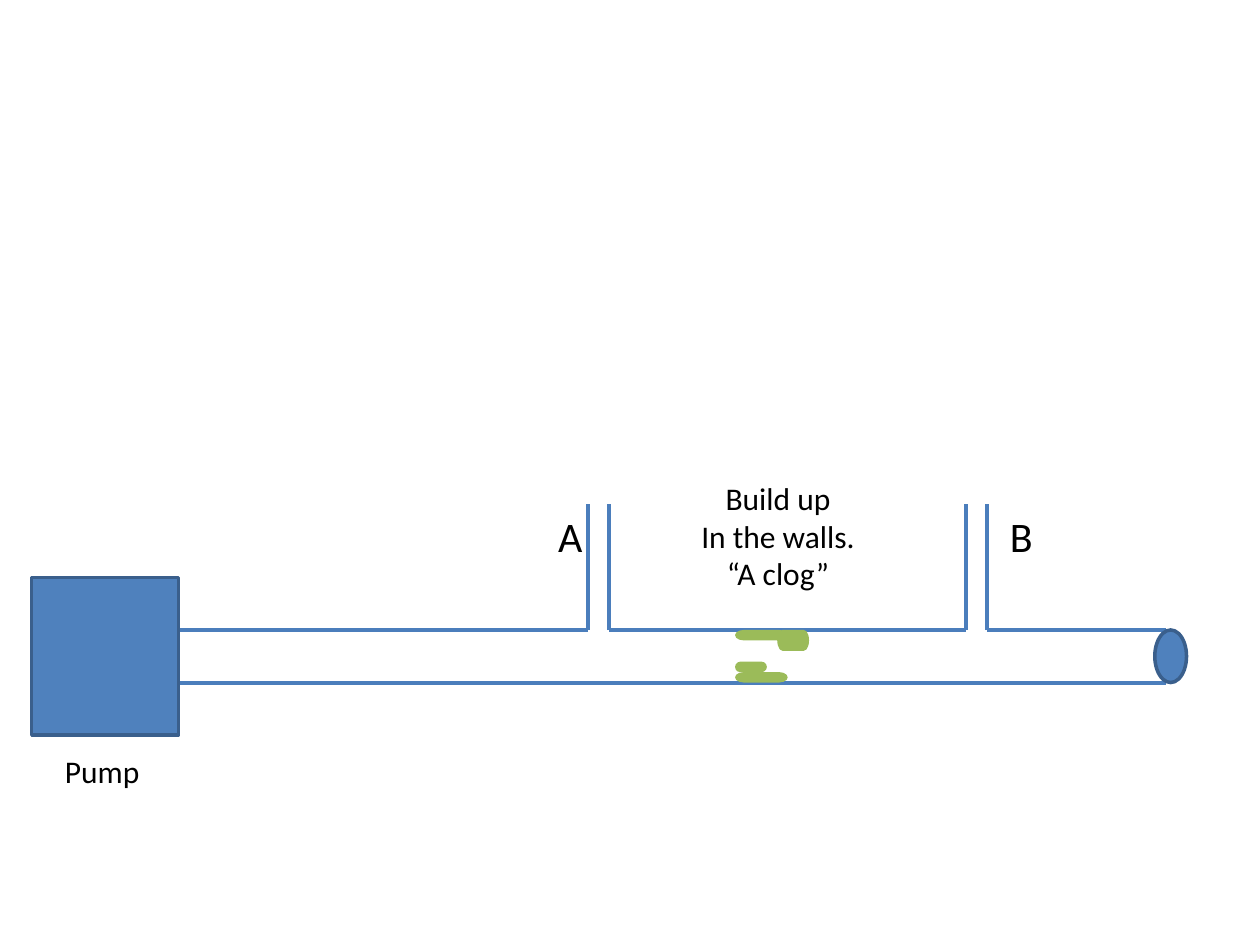
from dataclasses import dataclass

from lxml import etree
from pptx import Presentation
from pptx.dml.color import RGBColor
from pptx.enum.shapes import MSO_CONNECTOR, MSO_SHAPE
from pptx.enum.text import MSO_AUTO_SIZE, PP_ALIGN
from pptx.oxml.ns import qn
from pptx.util import Cm, Pt

STRAIGHT = MSO_CONNECTOR.STRAIGHT
RECTANGLE = MSO_SHAPE.RECTANGLE
OVAL = MSO_SHAPE.OVAL
TERMINATOR = MSO_SHAPE.FLOWCHART_TERMINATOR
LEFT, CENTER = PP_ALIGN.LEFT, PP_ALIGN.CENTER
FIT_SHAPE = MSO_AUTO_SIZE.SHAPE_TO_FIT_TEXT
BLANK_LAYOUT = 6


@dataclass(frozen=True)
class Theme:
    font: str = "Calibri"
    ink: RGBColor = RGBColor.from_string("000000")
    wall: RGBColor = RGBColor.from_string("4B7EBC")
    body: RGBColor = RGBColor.from_string("4F81BD")
    edge: RGBColor = RGBColor.from_string("3A5F8C")
    clog: RGBColor = RGBColor.from_string("9BBB59")
    note_size: Pt = Pt(18)
    letter_size: Pt = Pt(24)
    wall_width: Pt = Pt(2.25)
    edge_width: Pt = Pt(2)


THEME = Theme()

# Pipe geometry in centimetres
PIPE_TOP, PIPE_BOTTOM = 12.7, 13.76
PIPE_START, PIPE_END = 3.6, 23.5
RISER_TOP = 10.16
RISER_A = (11.85, 12.28)
RISER_B = (19.47, 19.9)
CLOG_LEFT, CLOG_LAYER = 14.82, 0.21


def add_wall(slide, x1, y1, x2, y2):
    wall = slide.shapes.add_connector(STRAIGHT, Cm(x1), Cm(y1), Cm(x2), Cm(y2))
    wall.line.color.rgb = THEME.wall
    wall.line.width = THEME.wall_width
    etree.SubElement(wall._element.spPr, qn("a:effectLst"))


def add_solid(slide, kind, left, top, width, height, fill, edge=None):
    solid = slide.shapes.add_shape(kind, Cm(left), Cm(top), Cm(width), Cm(height))
    solid.shadow.inherit = False
    solid.fill.solid()
    solid.fill.fore_color.rgb = fill
    if edge is None:
        solid.line.fill.background()
    else:
        solid.line.color.rgb = edge
        solid.line.width = THEME.edge_width


def add_label(slide, text, left, top, width, height, size, align=LEFT):
    label = slide.shapes.add_textbox(Cm(left), Cm(top), Cm(width), Cm(height))
    frame = label.text_frame
    frame.word_wrap = False
    frame.auto_size = FIT_SHAPE
    frame.text = text
    for paragraph in frame.paragraphs:
        paragraph.alignment = align
        for run in paragraph.runs:
            run.font.name = THEME.font
            run.font.size = size
            run.font.color.rgb = THEME.ink


def add_pipe(slide):
    """Draw the pipe walls, open at the top under each riser."""
    add_wall(slide, PIPE_START, PIPE_BOTTOM, PIPE_END, PIPE_BOTTOM)
    top_stops = (PIPE_START, *RISER_A, *RISER_B, PIPE_END)
    for start, end in zip(top_stops[::2], top_stops[1::2]):
        add_wall(slide, start, PIPE_TOP, end, PIPE_TOP)
    for x in RISER_A + RISER_B:
        add_wall(slide, x, PIPE_TOP, x, RISER_TOP)


def add_clog(slide):
    lumps = (
        (0, PIPE_BOTTOM - CLOG_LAYER, 1.06, CLOG_LAYER),
        (0, PIPE_TOP, 1.06, CLOG_LAYER),
        (0, PIPE_BOTTOM - 2 * CLOG_LAYER, 0.64, CLOG_LAYER),
        (0.85, PIPE_TOP, 0.64, 2 * CLOG_LAYER),
    )
    for offset, top, width, height in lumps:
        add_solid(slide, TERMINATOR, CLOG_LEFT + offset, top, width, height, THEME.clog)


def main():
    deck = Presentation()
    deck.slide_width, deck.slide_height = Cm(25.4), Cm(19.05)
    slide = deck.slides.add_slide(deck.slide_layouts[BLANK_LAYOUT])

    add_pipe(slide)
    add_solid(slide, OVAL, 23.28, PIPE_TOP, 0.64, PIPE_BOTTOM - PIPE_TOP,
              THEME.body, THEME.edge)
    add_solid(slide, RECTANGLE, 0.64, 11.64, 2.96, 3.18, THEME.body, THEME.edge)
    add_label(slide, "Pump", 1.06, 15.03, 2.03, 1.03, THEME.note_size)
    add_label(slide, "Build up\nIn the walls.\n“A clog”", 13.87, 9.53, 3.63, 3.33,
              THEME.note_size, CENTER)
    add_clog(slide)
    for letter, left in (("A", 11), ("B", 20.11)):
        add_label(slide, letter, left, RISER_TOP, 1.02, 1.28, THEME.letter_size)

    deck.save("out.pptx")


if __name__ == "__main__":
    main()
